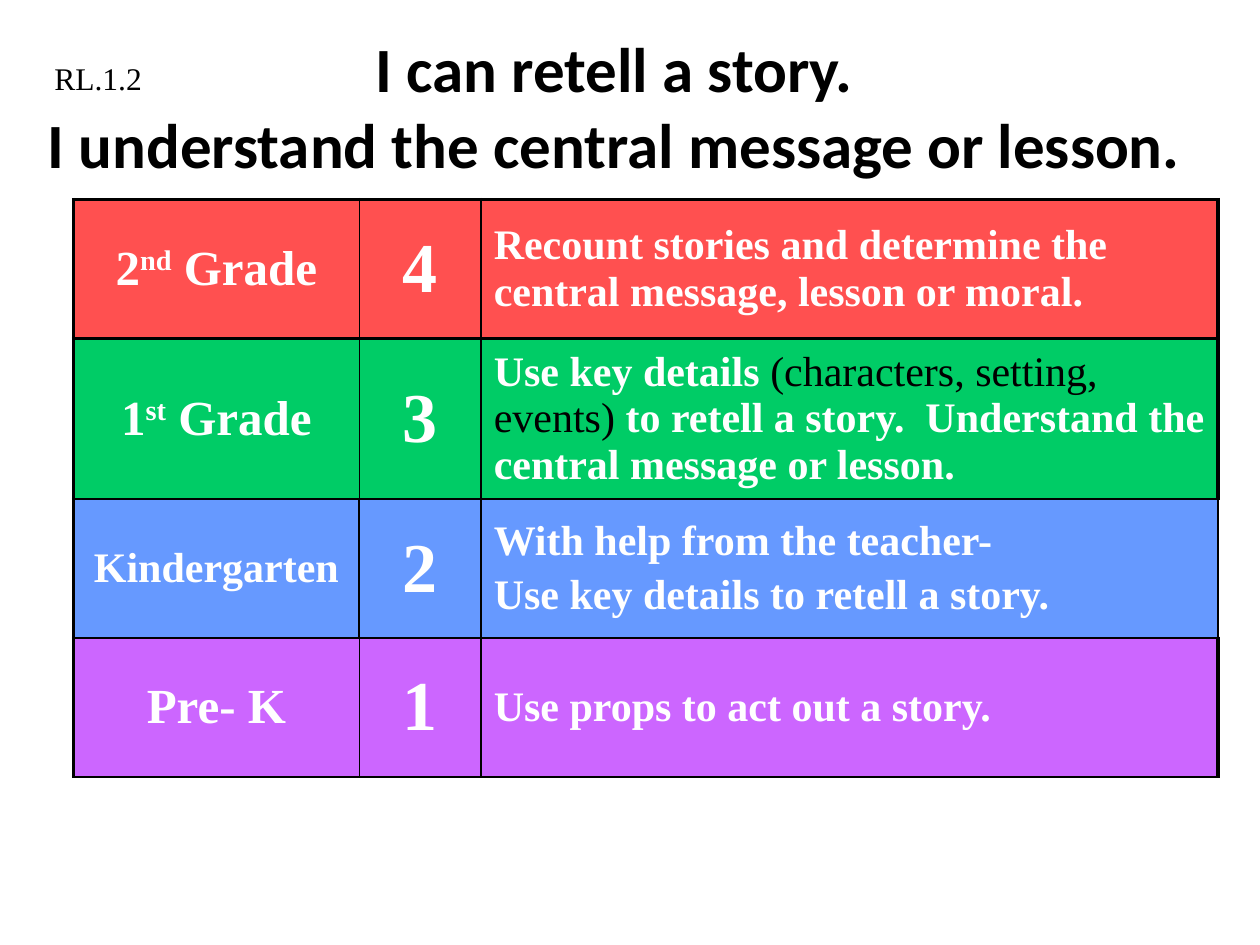
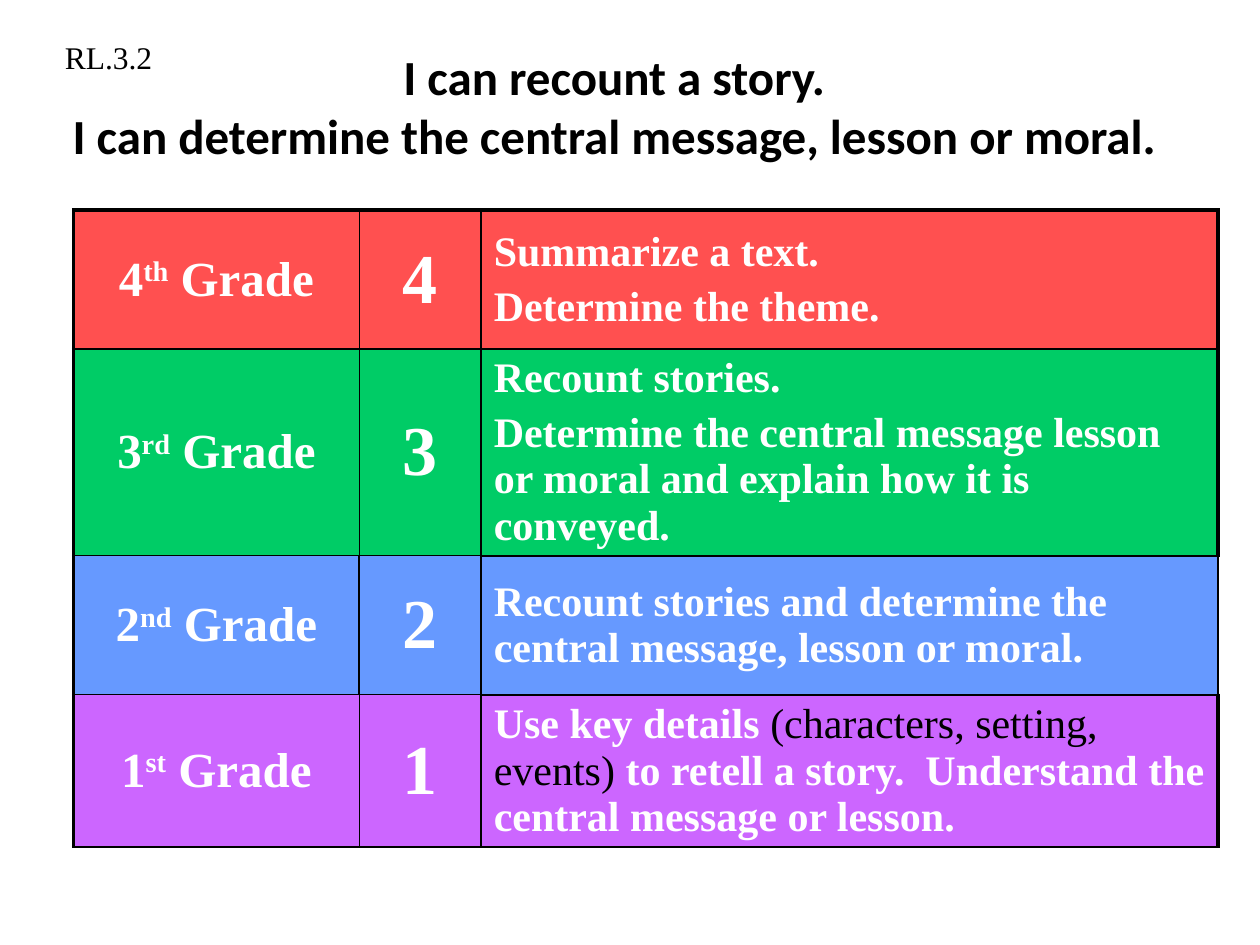
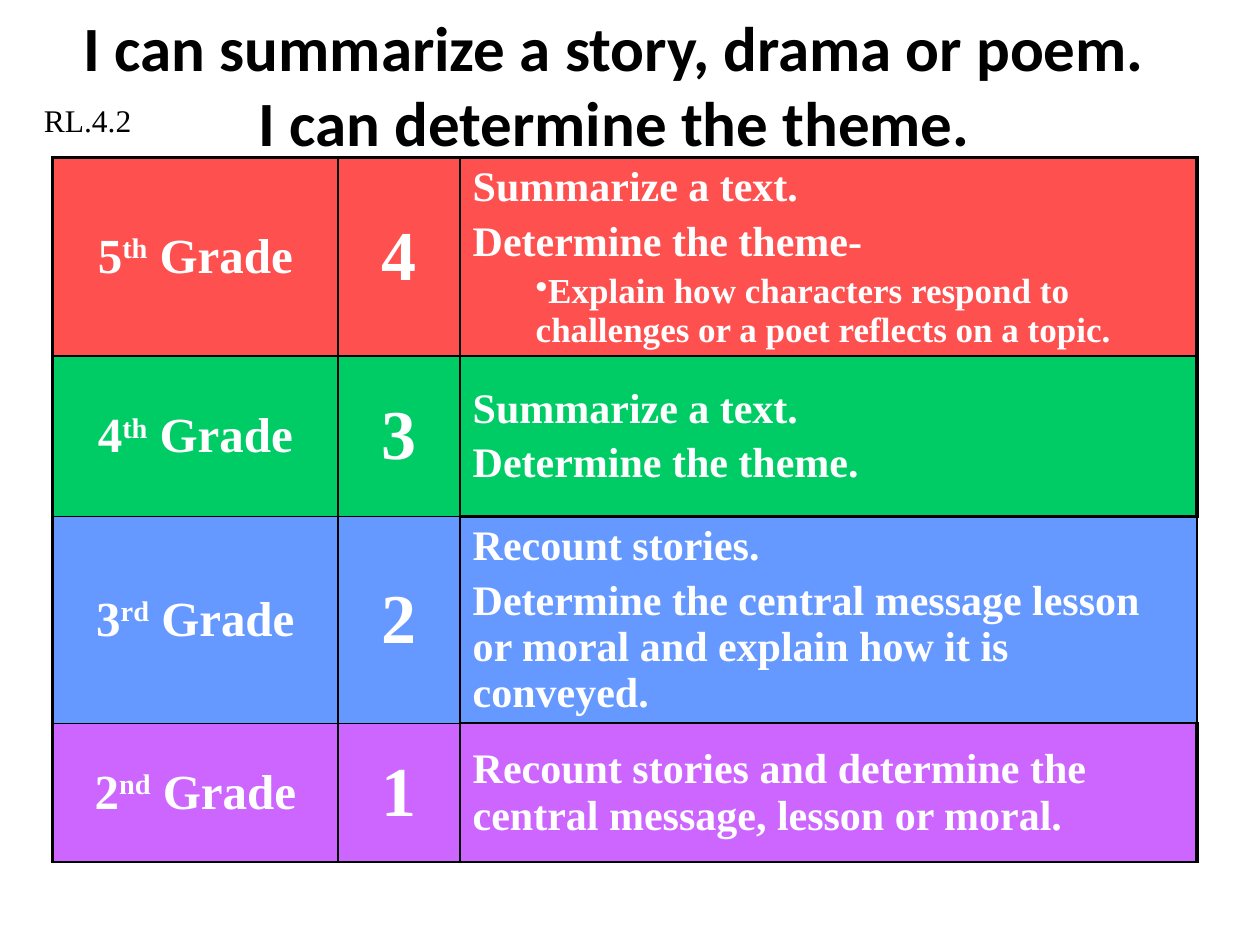
"""Build three reading rubrics with four coloured grade levels each."""
from pptx import Presentation
from pptx.dml.color import RGBColor
from pptx.enum.text import MSO_ANCHOR, MSO_AUTO_SIZE, PP_ALIGN
from pptx.oxml import parse_xml
from pptx.oxml.ns import nsdecls
from pptx.util import Pt

BLACK = RGBColor(0x00, 0x00, 0x00)
WHITE = RGBColor(0xFF, 0xFF, 0xFF)
RED = RGBColor(0xFF, 0x50, 0x50)
GREEN = RGBColor(0x00, 0xCC, 0x66)
BLUE = RGBColor(0x66, 0x99, 0xFF)
PURPLE = RGBColor(0xCC, 0x66, 0xFF)
LEVEL_COLORS = [RED, GREEN, BLUE, PURPLE]

TITLE = {"name": "Calibri", "bold": True, "color": BLACK}
CODE = {"name": "Times New Roman", "size": Pt(18), "color": BLACK}
DETAIL = {"name": "Times New Roman", "size": Pt(24), "bold": True, "color": WHITE}
GRADE = {**DETAIL, "size": Pt(28)}
SCORE = {**DETAIL, "size": Pt(40)}
BULLET = {**DETAIL, "size": Pt(20)}
ASIDE = {**DETAIL, "bold": False, "color": BLACK}

COLUMN_WIDTHS = [163.3, 69.7, 421]
THIN, MEDIUM, THICK = 1, 1.5, 2.25
EDGES = ["lnL", "lnR", "lnT", "lnB"]
BORDERS = [
    [(THICK, THIN, THICK, MEDIUM), (THIN, THIN, THICK, MEDIUM), (THIN, THICK, THICK, MEDIUM)],
    [(THICK, THIN, MEDIUM, THIN), (THIN, THIN, MEDIUM, THIN), (THIN, THICK, MEDIUM, MEDIUM)],
    [(THICK, MEDIUM, THIN, THIN), (MEDIUM, MEDIUM, THIN, THIN), (MEDIUM, MEDIUM, MEDIUM, MEDIUM)],
    [(THICK, THIN, THIN, MEDIUM), (THIN, THIN, THIN, MEDIUM), (THIN, THICK, MEDIUM, MEDIUM)],
]

PRE_K = [("Pre- K", GRADE)]
KINDERGARTEN = [("Kindergarten", DETAIL)]
FIRST, SECOND, THIRD, FOURTH, FIFTH = [
    [(number, GRADE), (ordinal, {**GRADE, "baseline": 30000}), (" Grade", GRADE)]
    for number, ordinal in [("1", "st"), ("2", "nd"), ("3", "rd"), ("4", "th"), ("5", "th")]
]

USE_PROPS = [[("Use props to act out a story.", DETAIL)]]
WITH_HELP = [
    [("With help from the teacher-", DETAIL)],
    [("Use key details to retell a story.", DETAIL)],
]
RETELL = [[
    ("Use key details ", DETAIL),
    ("(characters, setting, events)", ASIDE),
    (" to retell a story.  Understand the central message or lesson.", DETAIL),
]]
RECOUNT = [[("Recount stories and determine the central message, lesson or moral.", DETAIL)]]
EXPLAIN = [
    [("Recount stories.", DETAIL)],
    [("Determine the central message lesson or moral and explain how it is conveyed.", DETAIL)],
]
SUMMARIZE = [[("Summarize a text.", DETAIL)], [("Determine the theme.", DETAIL)]]
RESPOND = [
    [("Summarize a text.", DETAIL)],
    [("Determine the theme-", DETAIL)],
    [("Explain how characters respond to challenges or a poet reflects on a topic.", BULLET)],
]

RUBRICS = [
    {
        "title": ["I can retell a story.", "I understand the central message or lesson."],
        "title_size": 36, "title_top": 24,
        "code": "RL.1.2", "code_at": (24, 30), "table_at": (42, 114),
        "levels": [(SECOND, RECOUNT, 79.4), (FIRST, RETELL, 91.7),
                   (KINDERGARTEN, WITH_HELP, 79.4), (PRE_K, USE_PROPS, 79.4)],
    },
    {
        "title": ["I can recount a story.", "I can determine the central message, lesson or moral."],
        "title_size": 28, "title_top": 24,
        "code": "RL.3.2", "code_at": (30, 18), "table_at": (42, 120),
        "levels": [(FOURTH, SUMMARIZE, 79.4), (THIRD, EXPLAIN, 118.2),
                   (SECOND, RECOUNT, 79.4), (FIRST, RETELL, 87)],
    },
    {
        "title": ["I can summarize a story, drama or poem.", "I can determine the theme."],
        "title_size": 36, "title_top": 12,
        "code": "RL.4.2", "code_at": (18, 54), "table_at": (30, 90),
        "levels": [(FIFTH, RESPOND, 113.5), (FOURTH, SUMMARIZE, 91.7),
                   (THIRD, EXPLAIN, 118.2), (SECOND, RECOUNT, 79.4)],
    },
]


def add_text(paragraph, text, style):
    run = paragraph.add_run()
    run.text = text
    for key, value in style.items():
        if key == "color":
            run.font.color.rgb = value
        elif key == "baseline":
            run.font._element.set("baseline", str(value))
        else:
            setattr(run.font, key, value)


def fill_cell(cell, paragraphs, alignment, color, widths):
    cell.vertical_anchor = MSO_ANCHOR.MIDDLE
    cell.fill.solid()
    cell.fill.fore_color.rgb = color
    for position, (edge, width) in enumerate(zip(EDGES, widths)):
        cell._tc.get_or_add_tcPr().insert(position, parse_xml(
            f'<a:{edge} {nsdecls("a")} w="{Pt(width)}"><a:solidFill>'
            f'<a:srgbClr val="{BLACK}"/></a:solidFill></a:{edge}>'))
    frame = cell.text_frame
    for index, runs in enumerate(paragraphs):
        paragraph = frame.add_paragraph() if index else frame.paragraphs[0]
        paragraph.alignment = alignment
        properties = paragraph._p.get_or_add_pPr()
        properties.append(parse_xml(
            f'<a:spcBef {nsdecls("a")}><a:spcPct val="20000"/></a:spcBef>'))
        if runs[0][1] is BULLET:
            paragraph.level = 1
            properties.set("marL", str(Pt(36)))
            properties.set("indent", "0")
            properties.append(parse_xml(f'<a:buChar {nsdecls("a")} char="•"/>'))
        for text, style in runs:
            add_text(paragraph, text, style)


deck = Presentation()
deck.slide_width, deck.slide_height = Pt(720), Pt(540)

for rubric in RUBRICS:
    slide = deck.slides.add_slide(deck.slide_layouts[5])

    title = slide.shapes.title
    title.left, title.top = Pt(12), Pt(rubric["title_top"])
    title.width, title.height = Pt(678), Pt(72)
    title.text_frame.auto_size = MSO_AUTO_SIZE.NONE
    title.text_frame.vertical_anchor = MSO_ANCHOR.MIDDLE
    heading = title.text_frame.paragraphs[0]
    heading.alignment = PP_ALIGN.CENTER
    title_style = {**TITLE, "size": Pt(rubric["title_size"])}
    first_goal, second_goal = rubric["title"]
    add_text(heading, first_goal, title_style)
    heading.add_line_break()
    add_text(heading, second_goal, title_style)

    left, top = rubric["table_at"]
    levels = rubric["levels"]
    total_height = sum(height for _, _, height in levels)
    table = slide.shapes.add_table(
        len(levels), len(COLUMN_WIDTHS), Pt(left), Pt(top),
        Pt(sum(COLUMN_WIDTHS)), Pt(total_height)).table
    table.first_row = table.horz_banding = False
    for column, width in zip(table.columns, COLUMN_WIDTHS):
        column.width = Pt(width)
    for index, (grade, details, height) in enumerate(levels):
        table.rows[index].height = Pt(height)
        score = [(str(len(levels) - index), SCORE)]
        contents = [([grade], PP_ALIGN.CENTER), ([score], PP_ALIGN.CENTER), (details, PP_ALIGN.LEFT)]
        for column, (paragraphs, alignment) in enumerate(contents):
            fill_cell(table.cell(index, column), paragraphs, alignment,
                      LEVEL_COLORS[index], BORDERS[index][column])

    left, top = rubric["code_at"]
    standard = slide.shapes.add_textbox(Pt(left), Pt(top), Pt(102), Pt(29)).text_frame
    standard.word_wrap = True
    standard.auto_size = MSO_AUTO_SIZE.SHAPE_TO_FIT_TEXT
    add_text(standard.paragraphs[0], rubric["code"], CODE)

deck.save("out.pptx")
